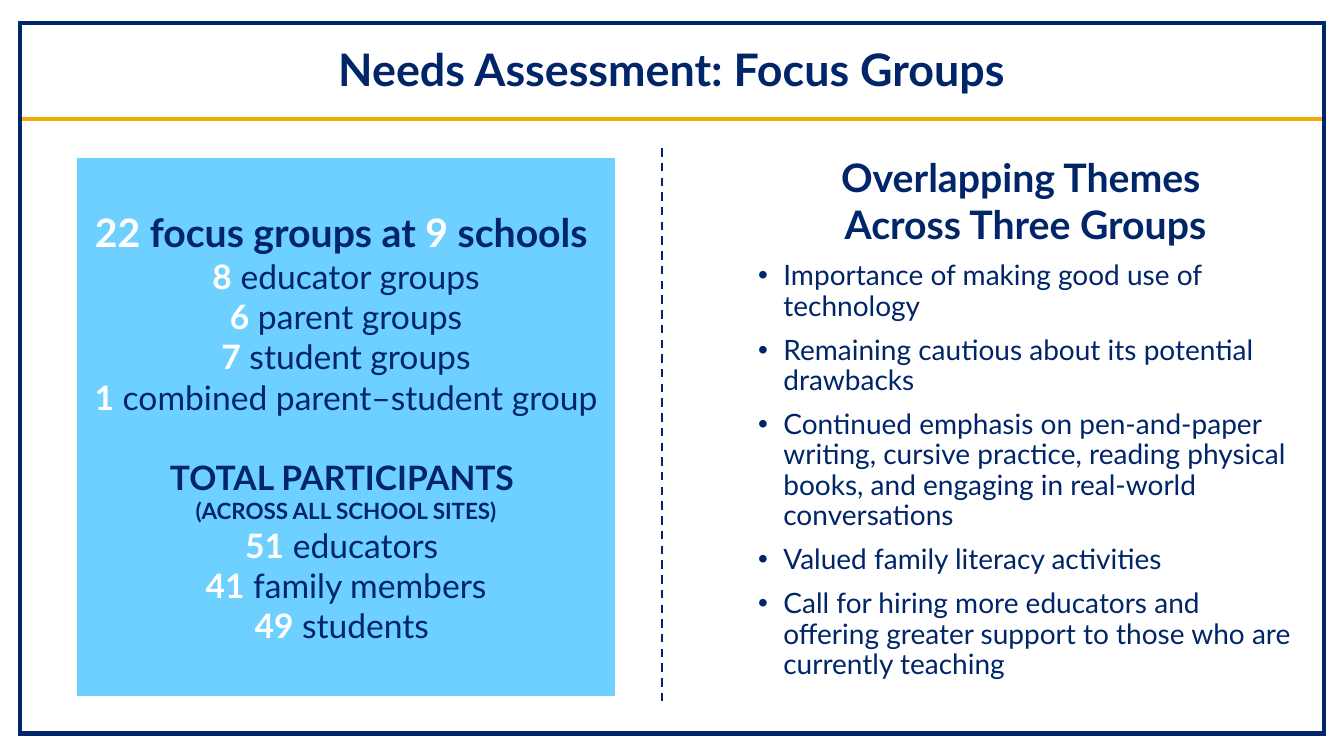
from lxml import etree
from pptx import Presentation
from pptx import util as u
from pptx.dml.color import RGBColor
from pptx.enum import dml, shapes, text
from pptx.oxml.ns import qn

COLORS = {"navy": "002569", "gold": "F1AD02", "sky": "6ED0FF", "white": "FFFFFF"}
COLS = 40

prs = Presentation()
prs.slide_width = u.Inches(13.333)
prs.slide_height = u.Inches(7.5)
cell = prs.slide_width / COLS
s = prs.slides.add_slide(prs.slide_layouts[6])


def grid(*cells):
    return [round(n * cell) for n in cells]


def write(p, words, size=24, color="navy", bold=False):
    r = p.add_run()
    r.text = words
    r.font.name = "Lato"
    r.font.size = u.Pt(size)
    r.font.bold = bold
    r.font.color.rgb = RGBColor.from_string(COLORS[color])


title = s.shapes.add_textbox(*grid(9.48, 1.01, 21.03, 2.25))
tf = title.text_frame
tf.word_wrap = True
tf.vertical_anchor = text.MSO_ANCHOR.MIDDLE
p = tf.paragraphs[0]
p.alignment = text.PP_ALIGN.CENTER
p.line_spacing = 0.9
write(p, "Needs Assessment: Focus Groups", size=32, bold=True)

themes = s.shapes.add_textbox(*grid(22.27, 4.42, 16.5, 16.5))
tf = themes.text_frame
tf.word_wrap = True
for i, heading in enumerate(["Overlapping Themes ", "Across Three Groups"]):
    p = tf.add_paragraph() if i else tf.paragraphs[0]
    p.alignment = text.PP_ALIGN.CENTER
    write(p, heading, size=28, bold=True)

for theme in [
    "Importance of making good use of technology",
    "Remaining cautious about its potential drawbacks",
    "Continued emphasis on pen-and-paper writing, cursive practice, "
    "reading physical books, and engaging in real-world conversations",
    "Valued family literacy activities",
    "Call for hiring more educators and offering greater support "
    "to those who are currently teaching",
]:
    p = tf.add_paragraph()
    p.line_spacing = 0.9
    p.space_before = u.Pt(10)
    pPr = p._p.get_or_add_pPr()
    pPr.set("marL", str(u.Inches(0.25)))
    pPr.set("indent", str(-u.Inches(0.25)))
    etree.SubElement(pPr, qn("a:buFont"), typeface="Arial")
    etree.SubElement(pPr, qn("a:buChar"), char="•")
    write(p, theme, size=20)

for corner, start, end, color, width, dash in [
    ((0.66, 2.54), (0.66, 3.54), (39.36, 3.54), "gold", 3, None),
    ((20.81, 4.41), (19.71, 4.41), (19.71, 20.91), "navy", 1.5, dml.MSO_LINE.DASH),
]:
    outline = s.shapes.build_freeform(*grid(*corner))
    outline.move_to(*grid(*start))
    outline.add_line_segments([grid(*end)], close=False)
    sp = outline.convert_to_shape()
    sp.shadow.inherit = False
    sp.fill.background()
    sp.line.color.rgb = RGBColor.from_string(COLORS[color])
    sp.line.width = u.Pt(width)
    sp.line.dash_style = dash

boxes = []
for place, fill, line in [
    ((0.59, 0.68, 38.82, 21.15), None, "navy"),
    ((2.35, 4.76, 15.9, 15.9), "sky", "sky"),
]:
    sp = s.shapes.add_shape(shapes.MSO_SHAPE.RECTANGLE, *grid(*place))
    sp.shadow.inherit = False
    if fill:
        sp.fill.solid()
        sp.fill.fore_color.rgb = RGBColor.from_string(COLORS[fill])
    else:
        sp.fill.background()
    sp.line.color.rgb = RGBColor.from_string(COLORS[line])
    sp.line.width = u.Pt(3)
    etree.SubElement(sp.line._get_or_add_ln(), qn("a:miter"), lim="800000")
    boxes.append(sp)

frame, panel = boxes
tf = panel.text_frame
tf.word_wrap = True
tf.vertical_anchor = text.MSO_ANCHOR.MIDDLE

p = tf.paragraphs[0]
p.alignment = text.PP_ALIGN.CENTER
for words, color in [
    ("22 ", "white"), ("focus groups at ", "navy"), ("9 ", "white"), ("schools ", "navy"),
]:
    write(p, words, size=28, color=color, bold=True)

for count, label, size, gap in [
    ("8", " educator groups", 24, 0),
    ("6", " parent groups", 24, 0),
    ("7", " student groups", 24, 0),
    ("1", " combined parent–student group", 24, 0),
    (None, "TOTAL PARTICIPANTS ", 24, 28.8),
    (None, "(ACROSS ALL SCHOOL SITES)", 16, 0),
    ("51", " educators ", 24, 0),
    ("41", " family members", 24, 0),
    ("49", " students ", 24, 0),
]:
    p = tf.add_paragraph()
    p.alignment = text.PP_ALIGN.CENTER
    p.space_before = u.Pt(gap)
    if count:
        write(p, count, size=size, color="white", bold=True)
    write(p, label, size=size, bold=count is None)

prs.save("out.pptx")
